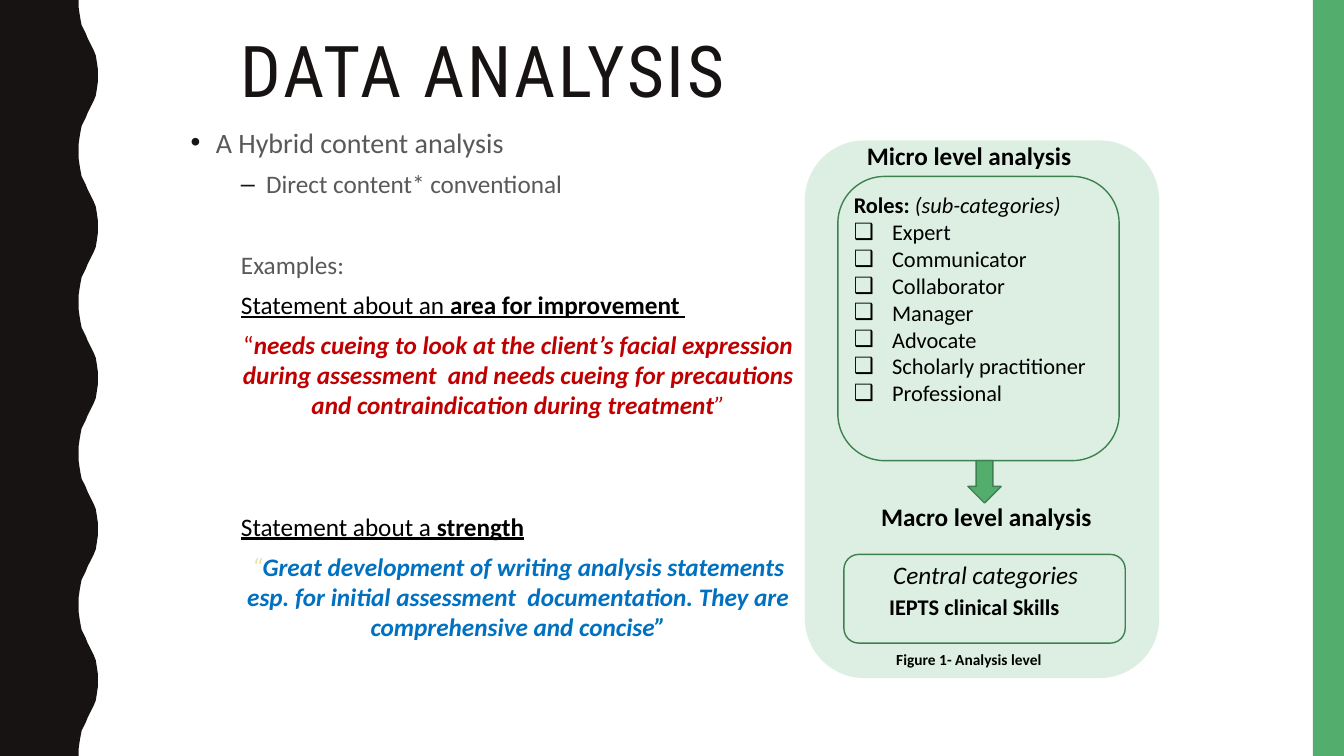
from lxml import etree
from pptx import Presentation
from pptx.dml.color import RGBColor
from pptx.enum.shapes import MSO_SHAPE
from pptx.enum.text import MSO_ANCHOR, PP_ALIGN
from pptx.oxml.ns import qn
from pptx.util import Inches, Pt

RECT = MSO_SHAPE.RECTANGLE
ROUND = MSO_SHAPE.ROUNDED_RECTANGLE
DOWN_ARROW = MSO_SHAPE.DOWN_ARROW
TOP, MIDDLE = MSO_ANCHOR.TOP, MSO_ANCHOR.MIDDLE
LEFT, CENTER = PP_ALIGN.LEFT, PP_ALIGN.CENTER

INK = RGBColor(0x17, 0x13, 0x12)
BLACK = RGBColor(0, 0, 0)
GRAY = RGBColor(0x59, 0x59, 0x59)
GREEN = RGBColor(0x53, 0xAE, 0x6E)
DARK_GREEN = RGBColor(0x3D, 0x81, 0x51)
PALE_GREEN = RGBColor(0xDD, 0xEF, 0xE2)
RED = RGBColor(0xC0, 0, 0)
BLUE = RGBColor(0, 0x70, 0xC0)
SAND = RGBColor(0xE2, 0xE1, 0xA4)

BODY_FONT = "Calibri"
TITLE_FONT = "Roboto Condensed"
ROLES = ["Expert", "Communicator", "Collaborator", "Manager", "Advocate",
         "Scholarly practitioner", "Professional"]
HALF_WAVE = [(0.78, 0), (0.78, 0.07), (0.79, 0.14), (0.8, 0.2), (0.81, 0.25),
             (0.83, 0.29), (0.85, 0.33), (0.87, 0.38), (0.89, 0.42), (0.91, 0.46),
             (0.93, 0.5), (0.95, 0.55), (0.96, 0.61), (0.97, 0.68), (0.97, 0.75)]
WAVE_HEIGHT = 1.5
WAVE_COUNT = 5


def paint(shape, fill, line=None):
    shape.shadow.inherit = False
    shape.fill.solid()
    shape.fill.fore_color.rgb = fill
    if line is None:
        shape.line.fill.background()
    else:
        shape.line.color.rgb = line
        shape.line.width = Pt(1)


def add_box(s, kind, left, top, width, height, fill, line=None):
    shape = s.shapes.add_shape(kind, Inches(left), Inches(top), Inches(width), Inches(height))
    paint(shape, fill, line)
    return shape


def add_wave(s):
    wave = HALF_WAVE + [(x, WAVE_HEIGHT - y) for x, y in HALF_WAVE[-2::-1]]
    points = [(x, y + n * WAVE_HEIGHT) for n in range(WAVE_COUNT) for x, y in wave]
    points.append((0, WAVE_HEIGHT * WAVE_COUNT))
    builder = s.shapes.build_freeform(0, 0)
    builder.add_line_segments([(Inches(x), Inches(y)) for x, y in points], close=True)
    paint(builder.convert_to_shape(), INK)


def add_run(p, text, size, color=BLACK, bold=False, italic=False, underline=False):
    r = p.add_run()
    r.text = text
    font = r.font
    font.name, font.size = BODY_FONT, Pt(size)
    font.bold, font.italic, font.underline = bold, italic, underline
    font.color.rgb = color


def set_bullet(p, margin, indent=0, char=None, color=BLACK):
    pPr = p._p.get_or_add_pPr()
    pPr.set("marL", str(Inches(margin)))
    pPr.set("indent", str(Inches(indent)))
    if char is None:
        etree.SubElement(pPr, qn("a:buNone"))
        return
    buClr = etree.SubElement(pPr, qn("a:buClr"))
    etree.SubElement(buClr, qn("a:srgbClr"), val=str(color))
    etree.SubElement(pPr, qn("a:buFont"), typeface="Arial")
    etree.SubElement(pPr, qn("a:buChar"), char=char)


def next_paragraph(tf):
    return tf.add_paragraph() if tf.paragraphs[0].runs else tf.paragraphs[0]


def add_body_line(tf, margin=0.5, indent=0, char=None, before=7, level=1, align=LEFT):
    p = next_paragraph(tf)
    p.level, p.alignment = level, align
    p.line_spacing, p.space_before = 1.0, Pt(before)
    set_bullet(p, margin, indent, char, INK)
    return p


def add_label(s, left, top, width, height, text, size, wrap=True, **style):
    tf = s.shapes.add_textbox(Inches(left), Inches(top), Inches(width), Inches(height)).text_frame
    tf.word_wrap = wrap
    add_run(tf.paragraphs[0], text, size, **style)
    return tf


def place(shape, left, top, width, height):
    shape.left, shape.top = Inches(left), Inches(top)
    shape.width, shape.height = Inches(width), Inches(height)


def fill_title(title):
    place(title, 2.29, 0.31, 6.7, 1.03)
    tf = title.text_frame
    tf.text = "DATA ANALYSIS"
    tf.vertical_anchor = TOP
    p = tf.paragraphs[0]
    p.alignment, p.line_spacing = LEFT, 0.9
    r = p.runs[0]
    r.font.name, r.font.size = TITLE_FONT, Pt(51)
    r.font.color.rgb = INK
    r._r.get_or_add_rPr().set("spc", "200")


def fill_body(body):
    place(body, 1.79, 1.19, 6.2, 6.05)
    tf = body.text_frame
    tf.vertical_anchor = TOP
    add_run(add_body_line(tf, 0.25, -0.25, "•", level=0), "A Hybrid content analysis", 20, GRAY)
    add_run(add_body_line(tf, 0.75, -0.25, "–"), "Direct content* conventional", 18, GRAY)
    add_run(add_body_line(tf, before=36), "Examples:", 18, GRAY)

    p = add_body_line(tf)
    add_run(p, "Statement about an ", 18, underline=True)
    add_run(p, "area for improvement ", 18, bold=True, underline=True)
    p = add_body_line(tf, align=CENTER)
    add_run(p, "“", 18, RED)
    add_run(p, "needs cueing to look at the client’s facial expression during assessment  and "
               "needs cueing for precautions and contraindication during treatment",
            18, RED, bold=True, italic=True)
    add_run(p, "”", 18, RED, italic=True)

    p = add_body_line(tf, before=65)
    add_run(p, "Statement about a ", 18, underline=True)
    add_run(p, "strength", 18, bold=True, underline=True)
    p = add_body_line(tf, align=CENTER)
    add_run(p, "“", 18, SAND, italic=True)
    add_run(p, "Great development of writing analysis statements esp. for initial assessment  "
               "documentation. They are comprehensive and concise”",
            18, BLUE, bold=True, italic=True)


def add_analysis_figure(s):
    add_box(s, ROUND, 7.99, 1.4, 3.5, 5.32, PALE_GREEN, PALE_GREEN)
    add_box(s, ROUND, 8.31, 1.75, 2.79, 2.82, PALE_GREEN, DARK_GREEN)
    add_box(s, ROUND, 8.37, 5.5, 2.79, 0.88, PALE_GREEN, DARK_GREEN)
    add_box(s, DOWN_ARROW, 9.6, 4.57, 0.33, 0.42, GREEN, DARK_GREEN)

    tf = add_label(s, 8.37, 1.85, 3.73, 2.27, "Roles: ", 16, bold=True)
    add_run(tf.paragraphs[0], "(sub-categories)", 16, italic=True)
    for role in ROLES:
        p = tf.add_paragraph()
        set_bullet(p, 0.38, -0.38, "❑")
        add_run(p, role, 16)

    add_label(s, 8.5, 1.34, 2.41, 0.4, "Micro level analysis", 18, bold=True)
    add_label(s, 8.64, 4.92, 2.41, 0.4, "Macro level analysis", 18, bold=True)
    add_label(s, 8.72, 5.84, 3.73, 0.37, "IEPTS clinical Skills", 16, bold=True)
    add_label(s, 8.76, 5.5, 2.08, 0.4, "Central categories", 18, wrap=False, italic=True)

    caption = add_box(s, RECT, 8.79, 6.4, 1.79, 0.3, PALE_GREEN)
    caption.text_frame.vertical_anchor = TOP
    p = caption.text_frame.paragraphs[0]
    p.alignment = LEFT
    add_run(p, "Figure 1- Analysis level", 11, bold=True)


def main():
    prs = Presentation()
    prs.slide_width, prs.slide_height = Inches(13.33), Inches(7.5)
    s = prs.slides.add_slide(prs.slide_layouts[1])
    add_wave(s)
    add_box(s, RECT, 13.02, 0, 0.31, 7.5, GREEN)
    fill_title(s.shapes.title)
    fill_body(s.placeholders[1])
    add_analysis_figure(s)
    prs.save("out.pptx")


if __name__ == "__main__":
    main()
